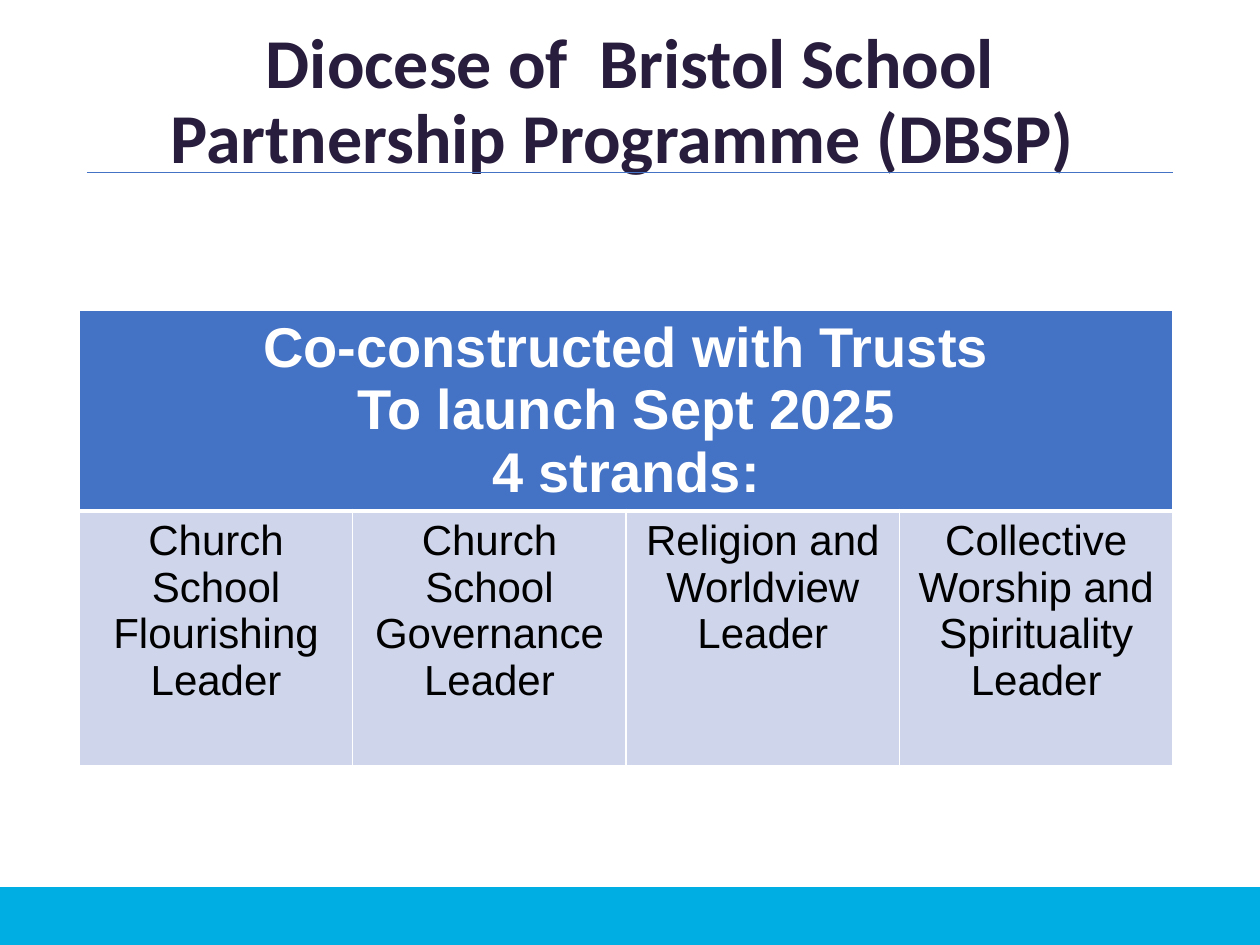
from dataclasses import dataclass

import lxml.etree
import pptx
import pptx.dml.color
import pptx.enum.shapes
import pptx.enum.text
import pptx.oxml.ns
import pptx.util
from pptx.util import Inches


@dataclass(frozen=True)
class Theme:
    title_font: str = "Calibri"
    table_font: str = "Arial"
    title_size: int = 40
    header_size: int = 32
    strand_size: int = 24
    title_color: str = "281D3C"
    accent: str = "4472C4"
    strand_fill: str = "CFD5EA"
    footer: str = "00AEE4"
    white: str = "FFFFFF"
    black: str = "000000"


@dataclass(frozen=True)
class CellStyle:
    fill: str
    color: str
    size: int
    bold: bool
    top_border: float
    bottom_border: float


THEME = Theme()
HEADER = CellStyle(THEME.accent, THEME.white, THEME.header_size, True, 1, 3)
STRAND = CellStyle(THEME.strand_fill, THEME.black, THEME.strand_size, False, 3, 1)

TITLE = "Diocese of  Bristol School Partnership Programme (DBSP) "
HEADER_LINES = ["Co-constructed with Trusts", "To launch Sept 2025", "4 strands:"]
STRANDS = [
    "Church School Flourishing Leader",
    "Church School Governance Leader",
    "Religion and Worldview Leader",
    "Collective Worship and Spirituality Leader",
]
MARGIN = 0.69
CONTENT_WIDTH = 8.62
COLUMN_WIDTH = 2.17


def rgb(color: str) -> pptx.dml.color.RGBColor:
    return pptx.dml.color.RGBColor.from_string(color)


def write_text(frame, lines: list[str], *, font: str, size: int, color: str,
               bold: bool, line_spacing: float = 1.0) -> None:
    """Write one centred paragraph per line."""
    for index, line in enumerate(lines):
        para = frame.paragraphs[0] if index == 0 else frame.add_paragraph()
        para.alignment = pptx.enum.text.PP_ALIGN.CENTER
        para.line_spacing = line_spacing
        para.space_before = pptx.util.Pt(0)
        span = para.add_run()
        span.text = line
        span.font.name = font
        span.font.size = pptx.util.Pt(size)
        span.font.bold = bold
        span.font.color.rgb = rgb(color)


def add_footer_band(page) -> None:
    band = page.shapes.add_shape(
        pptx.enum.shapes.MSO_SHAPE.RECTANGLE,
        Inches(0), Inches(7.04), Inches(10), Inches(0.46))
    band.shadow.inherit = False
    band.fill.solid()
    band.fill.fore_color.rgb = rgb(THEME.footer)
    band.line.fill.background()


def add_title_rule(page) -> None:
    rule = page.shapes.add_connector(
        pptx.enum.shapes.MSO_CONNECTOR.STRAIGHT,
        Inches(MARGIN), Inches(1.37), Inches(MARGIN + CONTENT_WIDTH), Inches(1.37))
    rule.line.color.rgb = rgb(THEME.accent)
    rule.line.width = pptx.util.Pt(0.5)
    lxml.etree.SubElement(rule._element.spPr, pptx.oxml.ns.qn("a:effectLst"))


def format_title(page) -> None:
    title = page.shapes.title
    title.left, title.top = Inches(MARGIN), Inches(0.17)
    title.width, title.height = Inches(CONTENT_WIDTH), Inches(0.7)
    frame = title.text_frame
    frame.word_wrap = True
    frame.auto_size = pptx.enum.text.MSO_AUTO_SIZE.NONE
    frame.vertical_anchor = pptx.enum.text.MSO_ANCHOR.TOP
    write_text(frame, [TITLE], font=THEME.title_font, size=THEME.title_size,
               color=THEME.title_color, bold=True, line_spacing=0.9)


def style_cell(cell, style: CellStyle) -> None:
    """Set the white borders, then the fill, in the order the format requires."""
    properties = cell._tc.get_or_add_tcPr()
    borders = {"L": 1, "R": 1, "T": style.top_border, "B": style.bottom_border}
    for side, width in borders.items():
        line = lxml.etree.SubElement(
            properties, pptx.oxml.ns.qn(f"a:ln{side}"), w=str(pptx.util.Pt(width)))
        fill = lxml.etree.SubElement(line, pptx.oxml.ns.qn("a:solidFill"))
        lxml.etree.SubElement(fill, pptx.oxml.ns.qn("a:srgbClr"), val=THEME.white)
    cell.fill.solid()
    cell.fill.fore_color.rgb = rgb(style.fill)


def write_cell(cell, lines: list[str], style: CellStyle) -> None:
    write_text(cell.text_frame, lines, font=THEME.table_font, size=style.size,
               color=style.color, bold=style.bold)


def add_strand_table(page) -> None:
    table = page.shapes.add_table(
        2, len(STRANDS), Inches(0.63), Inches(2.46),
        Inches(COLUMN_WIDTH * len(STRANDS)), Inches(3.51)).table
    table.horz_banding = False
    for column in table.columns:
        column.width = Inches(COLUMN_WIDTH)
    for row, height, style in zip(table.rows, (1.49, 2.02), (HEADER, STRAND)):
        row.height = Inches(height)
        for cell in row.cells:
            style_cell(cell, style)
    header = table.cell(0, 0)
    header.merge(table.cell(0, len(STRANDS) - 1))
    write_cell(header, HEADER_LINES, HEADER)
    for index, strand in enumerate(STRANDS):
        write_cell(table.cell(1, index), [strand], STRAND)


def main() -> None:
    deck = pptx.Presentation()
    deck.slide_width, deck.slide_height = Inches(10), Inches(7.5)
    page = deck.slides.add_slide(deck.slide_layouts.get_by_name("Title Only"))
    page.background.fill.solid()
    page.background.fill.fore_color.rgb = rgb(THEME.white)
    add_footer_band(page)
    add_title_rule(page)
    format_title(page)
    add_strand_table(page)
    deck.save("out.pptx")


if __name__ == "__main__":
    main()
